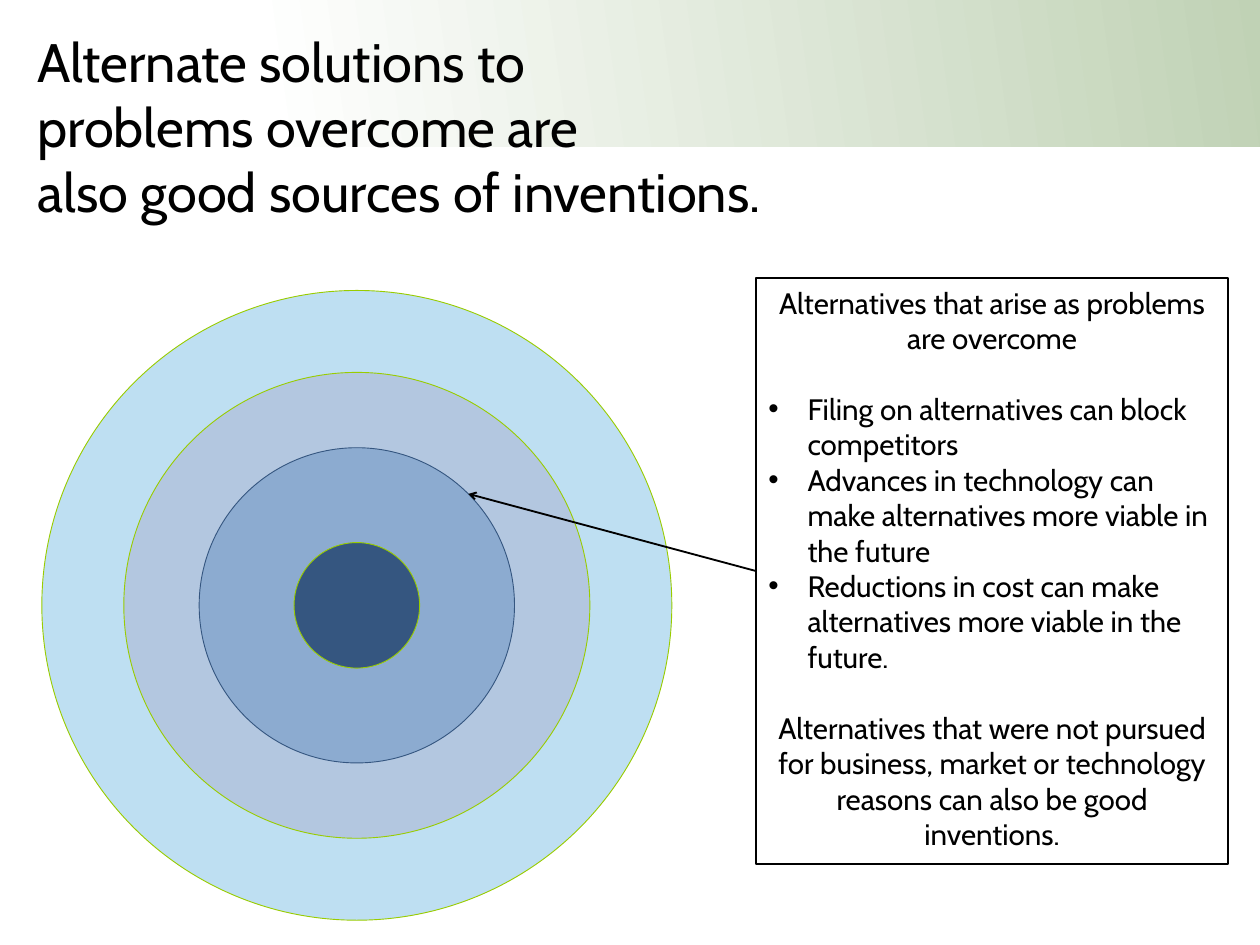
import math
from dataclasses import dataclass

import lxml.etree
import pptx
import pptx.dml.color
import pptx.enum.shapes
import pptx.enum.text
import pptx.oxml.ns
import pptx.util

Cm = pptx.util.Cm
Pt = pptx.util.Pt
ALIGN = pptx.enum.text.PP_ALIGN
SHAPE = pptx.enum.shapes.MSO_SHAPE


def rgb(value):
    return pptx.dml.color.RGBColor.from_string(value)


@dataclass(frozen=True)
class Theme:
    font: str = "Cabin"
    title_size: int = 44
    body_size: int = 24
    blank_line: float = 28.8
    ink: str = "000000"
    band: tuple = ("FFFFFF", "C0D2B5")
    green: str = "99CC00"
    navy: str = "355680"
    outer: str = "BEDFF2"
    middle: str = "B3C7E0"
    inner: str = "8CABD0"


THEME = Theme()
RINGS = (
    (18.06, THEME.outer, THEME.green),
    (13.36, THEME.middle, THEME.green),
    (9.04, THEME.inner, THEME.navy),
    (3.6, THEME.navy, THEME.green),
)
INTRO = "Alternatives that arise as problems are overcome"
BULLETS = (
    "Filing on alternatives can block competitors",
    "Advances in technology can make alternatives more viable in the future",
    "Reductions in cost can make alternatives more viable in the future.",
)
CLOSING = (
    "Alternatives that were not pursued for business, market or technology "
    "reasons can also be good inventions."
)


def set_values(target, values):
    for name, value in values.items():
        setattr(target, name, value)


def set_font(paragraph, size):
    set_values(paragraph.font, {"name": THEME.font, "size": Pt(size), "bold": False})
    paragraph.font.color.rgb = rgb(THEME.ink)


def set_line(line, color, width):
    line.color.rgb = rgb(color)
    line.width = Pt(width)


def set_frame(text_frame):
    set_values(text_frame, {
        "word_wrap": True,
        "auto_size": pptx.enum.text.MSO_AUTO_SIZE.NONE,
        "vertical_anchor": pptx.enum.text.MSO_ANCHOR.TOP,
        "margin_left": Cm(0.36), "margin_right": Cm(0.36),
        "margin_top": Cm(0.18), "margin_bottom": Cm(0.18),
    })


def add_child(parent, tag, **attributes):
    return lxml.etree.SubElement(parent, pptx.oxml.ns.qn(tag), attributes)


def add_band(slide, left, top, width, height):
    band = slide.shapes.add_shape(
        SHAPE.RECTANGLE, Cm(left), Cm(top), Cm(width), Cm(height))
    band.shadow.inherit = False
    band.line.fill.background()
    band.fill.gradient()
    band.fill.gradient_angle = 8
    for stop, color in zip(band.fill.gradient_stops, THEME.band):
        stop.color.rgb = rgb(color)
    slide.shapes.title.element.addprevious(band.element)


def add_title(slide, left, top, width, height):
    title = slide.shapes.title
    set_values(title, {"left": Cm(left), "top": Cm(top),
                       "width": Cm(width), "height": Cm(height)})
    set_frame(title.text_frame)
    title.text_frame.text = (
        "Alternate solutions to\vproblems overcome are\v"
        "also good sources of inventions.")
    paragraph = title.text_frame.paragraphs[0]
    paragraph.alignment = ALIGN.LEFT
    set_font(paragraph, THEME.title_size)


def add_rings(slide, left, top, size):
    rings = []
    for diameter, fill, outline in RINGS:
        inset = (size - diameter) / 2
        ring = slide.shapes.add_shape(
            SHAPE.OVAL, Cm(left + inset), Cm(top + inset), Cm(diameter), Cm(diameter))
        ring.shadow.inherit = False
        ring.fill.solid()
        ring.fill.fore_color.rgb = rgb(fill)
        set_line(ring.line, outline, 0.75)
        rings.append(ring)
    return rings


def add_paragraph(text_frame, text, bullet=False, gap=False):
    paragraph = text_frame.paragraphs[0]
    if paragraph.text:
        paragraph = text_frame.add_paragraph()
    paragraph.text = text
    paragraph.alignment = ALIGN.LEFT if bullet else ALIGN.CENTER
    if bullet:
        properties = paragraph._p.get_or_add_pPr()
        properties.set("marL", str(Cm(1.12)))
        properties.set("indent", str(-Cm(1.12)))
        add_child(properties, "a:buFont", typeface="Arial")
        add_child(properties, "a:buChar", char="•")
    paragraph.space_before = Pt(THEME.blank_line if gap else 0)
    set_font(paragraph, THEME.body_size)


def add_note_box(slide, left, top, width, height):
    note = slide.shapes.add_textbox(Cm(left), Cm(top), Cm(width), Cm(height))
    set_line(note.line, THEME.ink, 1.5)
    set_frame(note.text_frame)
    add_paragraph(note.text_frame, INTRO)
    for index, text in enumerate(BULLETS):
        add_paragraph(note.text_frame, text, bullet=True, gap=index == 0)
    add_paragraph(note.text_frame, CLOSING, gap=True)
    return note


def add_arrow(slide, note, ring):
    radius = ring.width / 2
    reach = radius * math.sqrt(0.5)
    arrow = slide.shapes.add_connector(
        pptx.enum.shapes.MSO_CONNECTOR.STRAIGHT,
        note.left, note.top + note.height // 2,
        round(ring.left + radius + reach), round(ring.top + radius - reach))
    arrow.begin_connect(note, 1)
    set_line(arrow.line, THEME.ink, 1.5)
    properties = arrow.element.spPr
    add_child(properties.find(pptx.oxml.ns.qn("a:ln")), "a:tailEnd", type="arrow")
    add_child(properties, "a:effectLst")


def main():
    presentation = pptx.Presentation()
    presentation.slide_width = Cm(36.12)
    presentation.slide_height = Cm(27.1)
    slide = presentation.slides.add_slide(presentation.slide_layouts[5])
    add_band(slide, 7.6, -0.43, 28.65, 4.62)
    add_title(slide, 0.71, 0.64, 29.06, 9.17)
    rings = add_rings(slide, 1.2, 8.33, 18.06)
    note = add_note_box(slide, 21.67, 7.98, 13.54, 16.79)
    add_arrow(slide, note, rings[2])
    presentation.save("out.pptx")


if __name__ == "__main__":
    main()
